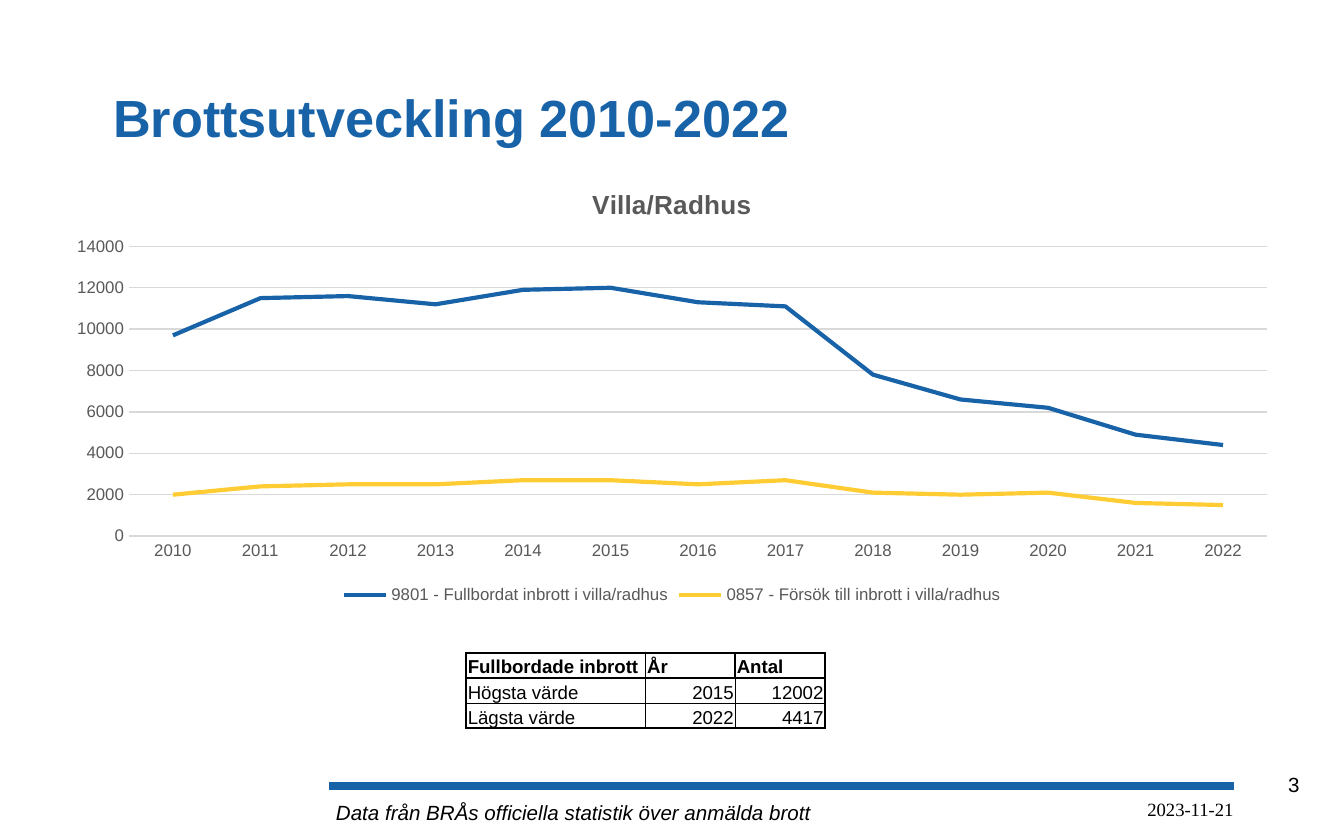
import pptx
import pptx.chart.data
import pptx.dml.color
import pptx.enum.chart
import pptx.enum.shapes
import pptx.enum.text
import pptx.oxml
import pptx.oxml.ns
import pptx.util
from pptx.util import Cm, Pt

BLUE = pptx.dml.color.RGBColor(0x18, 0x62, 0xA8)
YELLOW = pptx.dml.color.RGBColor(0xFF, 0xCC, 0x33)
BLACK = pptx.dml.color.RGBColor(0, 0, 0)
GRAY = pptx.dml.color.RGBColor(0x59, 0x59, 0x59)
LIGHT_GRAY = pptx.dml.color.RGBColor(0xD9, 0xD9, 0xD9)

LEFT = pptx.enum.text.PP_ALIGN.LEFT
RIGHT = pptx.enum.text.PP_ALIGN.RIGHT
TOP = pptx.enum.text.MSO_ANCHOR.TOP
MIDDLE = pptx.enum.text.MSO_ANCHOR.MIDDLE

YEARS = [str(year) for year in range(2010, 2023)]
SERIES = [
    ("9801 - Fullbordat inbrott i villa/radhus", BLUE,
     [9700, 11500, 11600, 11200, 11900, 12000, 11300, 11100, 7800, 6600, 6200, 4900, 4400]),
    ("0857 - Försök till inbrott i villa/radhus", YELLOW,
     [2000, 2400, 2500, 2500, 2700, 2700, 2500, 2700, 2100, 2000, 2100, 1600, 1500]),
]
EXTREMES = [
    ("Fullbordade inbrott", "År", "Antal"),
    ("Högsta värde", "2015", "12002"),
    ("Lägsta värde", "2022", "4417"),
]


def style_font(font, size, color, name="Arial", bold=False, italic=False):
    font.name = name
    font.size = Pt(size)
    font.bold = bold
    font.italic = italic
    font.color.rgb = color


def add_text(slide, box, text, size, color=BLACK, align=LEFT, anchor=TOP,
             insets=(0.25, 0.13), wrap=True, **style):
    frame = slide.shapes.add_textbox(*map(Cm, box)).text_frame
    frame.word_wrap = wrap
    frame.vertical_anchor = anchor
    frame.margin_left, frame.margin_top = map(Cm, insets)
    frame.margin_right, frame.margin_bottom = map(Cm, insets)
    paragraph = frame.paragraphs[0]
    paragraph.text = text
    paragraph.alignment = align
    style_font(paragraph.font, size, color, **style)


def add_title(slide, box):
    add_text(slide, box, "Brottsutveckling 2010-2022", 28, BLUE,
             anchor=MIDDLE, insets=(0.18, 0.1), bold=True)


def add_crime_chart(slide, box):
    data = pptx.chart.data.CategoryChartData()
    data.categories = YEARS
    for name, _, values in SERIES:
        data.add_series(name, values)
    chart = slide.shapes.add_chart(
        pptx.enum.chart.XL_CHART_TYPE.LINE, *map(Cm, box), data).chart
    style_font(chart.font, 10, BLACK)

    # Title and legend
    chart.has_title = True
    title = chart.chart_title.text_frame.paragraphs[0]
    title.text = "Villa/Radhus"
    style_font(title.font, 14, GRAY, bold=True)
    chart.chart_title.include_in_layout = False
    chart.has_legend = True
    chart.legend.position = pptx.enum.chart.XL_LEGEND_POSITION.BOTTOM
    chart.legend.include_in_layout = False
    style_font(chart.legend.font, 9, GRAY)

    # Axes
    for axis in (chart.category_axis, chart.value_axis):
        axis.major_tick_mark = pptx.enum.chart.XL_TICK_MARK.NONE
        axis.minor_tick_mark = pptx.enum.chart.XL_TICK_MARK.NONE
        style_font(axis.tick_labels.font, 9, GRAY)
    chart.value_axis.minimum_scale = 0
    chart.value_axis.maximum_scale = 14000
    chart.value_axis.major_unit = 2000
    chart.value_axis.format.line.fill.background()
    for line in (chart.category_axis.format.line,
                 chart.value_axis.major_gridlines.format.line):
        line.color.rgb = LIGHT_GRAY
        line.width = Pt(0.75)

    # Lines
    plot = chart.plots[0]
    plot.vary_by_categories = False
    for series, (_, color, _) in zip(plot.series, SERIES):
        series.smooth = False
        series.marker.style = pptx.enum.chart.XL_MARKER_STYLE.NONE
        series.format.line.color.rgb = color
        series.format.line.width = Pt(2.25)


def set_borders(cell, widths):
    properties = cell._tc.get_or_add_tcPr()
    for index, (side, width) in enumerate(widths.items()):
        properties.insert(index, pptx.oxml.parse_xml(
            f'<a:{side} {pptx.oxml.ns.nsdecls("a")} w="{Pt(width)}">'
            f'<a:solidFill><a:srgbClr val="{BLACK}"/></a:solidFill></a:{side}>'))


def add_extremes_table(slide, box):
    row_count, column_count = len(EXTREMES), len(EXTREMES[0])
    table = slide.shapes.add_table(row_count, column_count, *map(Cm, box)).table
    for column, share in zip(table.columns, (0.5, 0.25, 0.25)):
        column.width = Cm(box[2] * share)
    for r, values in enumerate(EXTREMES):
        for c, value in enumerate(values):
            cell = table.cell(r, c)
            cell.fill.background()
            cell.vertical_anchor = pptx.enum.text.MSO_ANCHOR.BOTTOM
            cell.margin_left = cell.margin_right = cell.margin_top = Cm(0.03)
            cell.margin_bottom = 0
            paragraph = cell.text_frame.paragraphs[0]
            paragraph.text = value
            paragraph.alignment = RIGHT if r and c else LEFT
            style_font(paragraph.font, 10, BLACK, bold=r == 0)
            # Header and outer edges are heavy, inner edges light
            heavy = {"lnL": r == 0 or c == 0,
                     "lnR": r == 0 or c == column_count - 1,
                     "lnT": r <= 1,
                     "lnB": r in (0, row_count - 1)}
            set_borders(cell, {side: 1 if on else 0.5 for side, on in heavy.items()})


def add_footer(slide, box):
    left, top, width, _ = box
    # Rule
    rule = slide.shapes.add_connector(
        pptx.enum.shapes.MSO_CONNECTOR.STRAIGHT,
        Cm(left + 0.12), Cm(top + 0.36), Cm(left + 17.22), Cm(top + 0.36))
    rule.line.color.rgb = BLUE
    rule.line.width = Pt(4.5)
    rule._element.spPr.append(
        pptx.oxml.parse_xml(f'<a:effectLst {pptx.oxml.ns.nsdecls("a")}/>'))
    # Page number, date and source
    add_text(slide, (left + width - 1.24, top, 1.24, 0.69), "3", 11,
             align=RIGHT, insets=(0.23, 0.1))
    add_text(slide, (left + 1.82, top + 0.46, 15.62, 0.66), "2023-11-21", 10,
             align=RIGHT, insets=(0.23, 0.13), name="Times New Roman")
    add_text(slide, (left, top + 0.49, 9.55, 0.74),
             "Data från BRÅs officiella statistik över anmälda brott", 11,
             wrap=False, italic=True)


def main():
    presentation = pptx.Presentation()
    presentation.slide_width = Cm(25.4)
    presentation.slide_height = Cm(15.88)
    slide = presentation.slides.add_slide(presentation.slide_layouts[6])
    add_title(slide, (1.96, 0.89, 21.36, 2.64))
    add_crime_chart(slide, (0.99, 3.15, 23.42, 8.38))
    add_extremes_table(slide, (8.81, 12.34, 6.78, 1.43))
    add_footer(slide, (6.1, 14.5, 18.69, 1.23))
    presentation.save("out.pptx")


if __name__ == "__main__":
    main()
